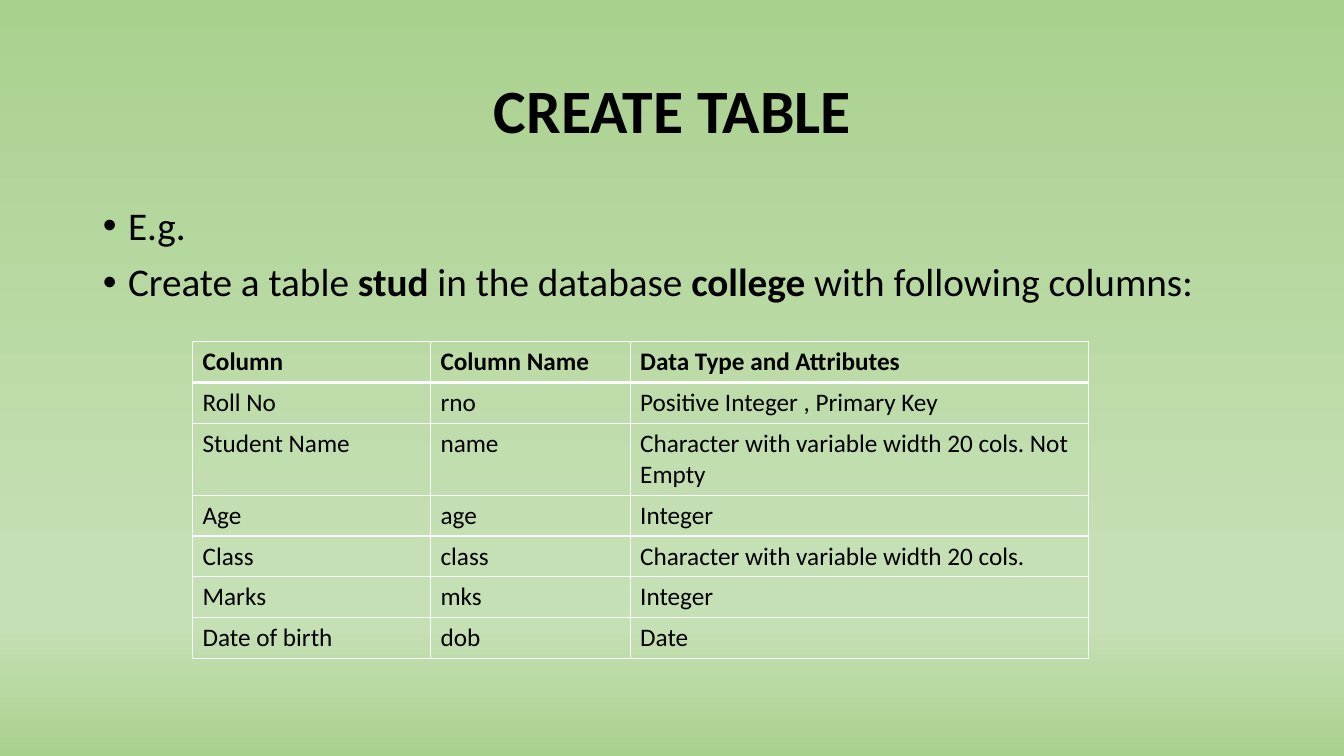
import pptx
import pptx.util
import pptx.dml.color
import pptx.enum.text
import pptx.oxml.ns
import lxml.etree

Inches = pptx.util.Inches
Pt = pptx.util.Pt
qn = pptx.oxml.ns.qn

COLORS = {"text": "000000", "border": "FFFFFF", "edge": "A9D18E", "glow": "C5E0B4"}
FONT = "Calibri"
GRADIENT = [(0, "edge"), (74, "glow"), (83, "glow"), (100, "edge")]
BULLETS = [
    [("E.g.", False)],
    [
        ("Create a table ", False),
        ("stud ", True),
        ("in the database ", False),
        ("college", True),
        (" with following columns:", False),
    ],
]
COLUMN_WIDTHS = [2.36, 1.98, 4.55]
ROW_HEIGHT = 0.4
ROWS = [
    ("Column", "Column Name", "Data Type and Attributes"),
    ("Roll No", "rno", "Positive Integer , Primary Key"),
    ("Student Name", "name", "Character with variable width 20 cols. Not Empty"),
    ("Age", "age", "Integer"),
    ("Class", "class", "Character with variable width 20 cols."),
    ("Marks", "mks", "Integer"),
    ("Date of birth", "dob", "Date"),
]


def place(shape, box):
    shape.left, shape.top, shape.width, shape.height = map(Inches, box)


def style_font(font, size, bold=None):
    font.name = FONT
    font.size = Pt(size)
    font.bold = bold
    font.color.rgb = pptx.dml.color.RGBColor.from_string(COLORS["text"])


def add_color(parent, name):
    lxml.etree.SubElement(parent, qn("a:srgbClr"), val=COLORS[name])


def paint_background(page):
    fill = page.background.fill
    fill.gradient()
    fill.gradient_angle = 270
    stops = next(page.element.iter(qn("a:gsLst")))
    for stop in list(stops):
        stops.remove(stop)
    for position, name in GRADIENT:
        stop = lxml.etree.SubElement(stops, qn("a:gs"), pos=str(position * 1000))
        add_color(stop, name)


def write_title(page, box):
    title = page.shapes.title
    place(title, box)
    frame = title.text_frame
    frame.text = "CREATE TABLE"
    frame.vertical_anchor = pptx.enum.text.MSO_ANCHOR.MIDDLE
    para = frame.paragraphs[0]
    para.alignment = pptx.enum.text.PP_ALIGN.CENTER
    para.line_spacing = 0.9
    style_font(para.font, 44, True)


def write_bullets(page, box):
    body = page.placeholders[1]
    place(body, box)
    frame = body.text_frame
    frame.auto_size = pptx.enum.text.MSO_AUTO_SIZE.NONE
    for index, pieces in enumerate(BULLETS):
        para = frame.add_paragraph() if index else frame.paragraphs[0]
        para.line_spacing = 0.9
        para.space_before = Pt(10)
        style_font(para.font, 28)
        properties = para._p.get_or_add_pPr()
        properties.set("marL", str(Inches(0.25)))
        properties.set("indent", str(Inches(-0.25)))
        for text, bold in pieces:
            span = para.add_run()
            span.text = text
            span.font.bold = bold


def draw_borders(cell, widths):
    properties = cell._tc.get_or_add_tcPr()
    for index, (side, width) in enumerate(widths.items()):
        line = lxml.etree.Element(qn("a:ln" + side), w=str(Pt(width)))
        add_color(lxml.etree.SubElement(line, qn("a:solidFill")), "border")
        properties.insert(index, line)


def add_column_table(page, left, top):
    table = page.shapes.add_table(
        len(ROWS),
        len(COLUMN_WIDTHS),
        Inches(left),
        Inches(top),
        Inches(sum(COLUMN_WIDTHS)),
        Inches(ROW_HEIGHT * len(ROWS)),
    ).table
    table.horz_banding = False
    for column, width in zip(table.columns, COLUMN_WIDTHS):
        column.width = Inches(width)
    for row_index, texts in enumerate(ROWS):
        header = row_index == 0
        widths = {"L": 1, "R": 1, "T": 3 if row_index == 1 else 1, "B": 3 if header else 1}
        for column_index, text in enumerate(texts):
            cell = table.cell(row_index, column_index)
            cell.text = text
            cell.fill.background()
            style_font(cell.text_frame.paragraphs[0].font, 18, header)
            draw_borders(cell, widths)


def build_table_slide(deck):
    page = deck.slides.add_slide(deck.slide_layouts[1])
    paint_background(page)
    write_title(page, (0.92, 0.4, 11.5, 1.45))
    write_bullets(page, (0.92, 2, 11.5, 4.76))
    add_column_table(page, 1.91, 3.39)


def main():
    deck = pptx.Presentation()
    deck.slide_width = Inches(13.33)
    deck.slide_height = Inches(7.5)
    build_table_slide(deck)
    deck.save("out.pptx")


if __name__ == "__main__":
    main()
